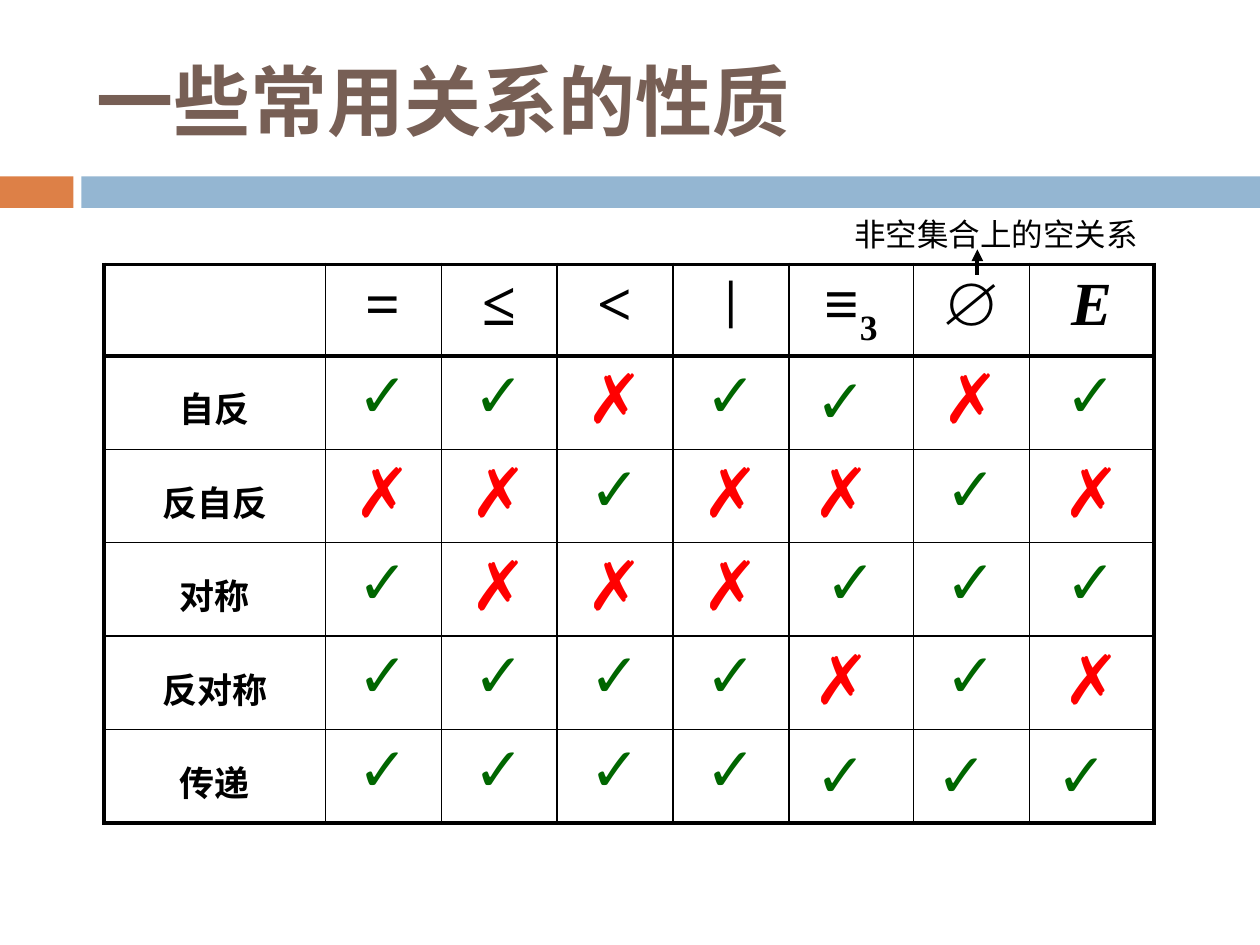
from lxml import etree
from pptx import Presentation
from pptx.dml.color import RGBColor
from pptx.enum.dml import MSO_LINE_DASH_STYLE
from pptx.enum.lang import MSO_LANGUAGE_ID
from pptx.enum.shapes import MSO_CONNECTOR, MSO_SHAPE
from pptx.enum.text import MSO_ANCHOR, PP_ALIGN
from pptx.oxml.ns import qn
from pptx.util import Pt

CHINESE = MSO_LANGUAGE_ID.SIMPLIFIED_CHINESE
STRAIGHT = MSO_CONNECTOR.STRAIGHT
RECTANGLE = MSO_SHAPE.RECTANGLE
SOLID = MSO_LINE_DASH_STYLE.SOLID
MIDDLE = MSO_ANCHOR.MIDDLE
LEFT, CENTER = PP_ALIGN.LEFT, PP_ALIGN.CENTER

BLACK = RGBColor(0, 0, 0)
BROWN = RGBColor(0x77, 0x5F, 0x55)
ORANGE = RGBColor(0xDD, 0x80, 0x47)
BLUE = RGBColor(0x94, 0xB6, 0xD2)
GREEN = RGBColor(0, 0x66, 0)
RED = RGBColor(0xFF, 0, 0)

HEADING, LABEL, SYMBOL = "Calibri", "Arial", "Times New Roman"
RELATIONS = "=≤<|≡∅E"
PROPERTIES = {
    "自反": "✓✓✗✓✓✗✓",
    "反自反": "✗✗✓✗✗✓✗",
    "对称": "✓✗✗✗✓✓✓",
    "反对称": "✓✓✓✓✗✓✗",
    "传递": "✓✓✓✓✓✓✓",
}
MARK_FORMATS = {"✓": (35, GREEN), "✗": (39, RED)}
SPACED_MARKS = {(1, 5), (2, 5), (4, 5), (5, 5), (5, 6), (5, 7)}
COLUMN_WIDTHS = [126.5, 66.2, 66.2, 66.2, 66.2, 71.3, 66.2, 71.2]
ROW_HEIGHTS = [52.4] + [53.4] * len(PROPERTIES)


def write(paragraph, text, size, font=SYMBOL, color=BLACK, bold=True,
          italic=False, baseline=0, align=CENTER):
    """Append a formatted run to a paragraph."""
    paragraph.alignment = align
    run = paragraph.add_run()
    run.text = text
    run.font.size = Pt(size)
    run.font.name = font
    run.font.color.rgb = color
    run.font.bold = bold
    run.font.italic = italic
    run.font.language_id = CHINESE
    if baseline:
        run.font._element.set("baseline", str(baseline * 1000))


def add_bar(slide, left, width, color):
    """Draw one part of the band below the title."""
    bar = slide.shapes.add_shape(RECTANGLE, Pt(left), Pt(100.8), Pt(width), Pt(18))
    bar.shadow.inherit = False
    bar.fill.solid()
    bar.fill.fore_color.rgb = color
    bar.line.fill.background()


def add_title(slide, text):
    """Place and fill the title placeholder."""
    title = slide.shapes.title
    title.left, title.top, title.width, title.height = Pt(48), Pt(18), Pt(642), Pt(78)
    title.text_frame.vertical_anchor = MIDDLE
    write(title.text_frame.paragraphs[0], text, 44, font=HEADING, color=BROWN, align=LEFT)


def add_note(slide, text):
    """Write the remark above the table."""
    note = slide.shapes.add_textbox(Pt(481), Pt(119.5), Pt(178), Pt(29))
    note.text_frame.word_wrap = False
    write(note.text_frame.paragraphs[0], text, 18, font=HEADING, bold=False, align=LEFT)


def add_arrow(slide, x, start, end):
    """Draw a vertical arrow from start to end."""
    arrow = slide.shapes.add_connector(STRAIGHT, Pt(x), Pt(start), Pt(x), Pt(end))
    arrow.line.color.rgb = BLACK
    arrow.line.width = Pt(2.25)
    arrow.line.dash_style = SOLID
    etree.SubElement(arrow.line._get_or_add_ln(), qn("a:tailEnd"), type="triangle")
    etree.SubElement(arrow._element.spPr, qn("a:effectLst"))


def set_borders(cell, **widths):
    """Give each side of a cell a black line of its own width."""
    properties = cell._tc.get_or_add_tcPr()
    for side, width in widths.items():
        border = etree.SubElement(properties, qn(f"a:ln{side}"), w=str(Pt(width)))
        fill = etree.SubElement(border, qn("a:solidFill"))
        etree.SubElement(fill, qn("a:srgbClr"), val=str(BLACK))


def format_cell(cell, row, column):
    """Frame a cell by its place in the grid and clear its fill."""
    last_row, last_column = len(ROW_HEIGHTS) - 1, len(COLUMN_WIDTHS) - 1
    set_borders(
        cell,
        L=2.25 if column == 0 else 1,
        R=2.25 if column == last_column else 1,
        T={0: 2.25, 1: 3}.get(row, 1),
        B={0: 3, last_row: 2.25}.get(row, 1),
    )
    cell.fill.background()


def add_relation_table(slide):
    """Build the table of relations and their properties."""
    frame = slide.shapes.add_table(
        len(ROW_HEIGHTS), len(COLUMN_WIDTHS), Pt(59.5), Pt(151),
        Pt(sum(COLUMN_WIDTHS)), Pt(sum(ROW_HEIGHTS)))
    table = frame.table
    table.first_row = table.horz_banding = False
    for column, width in zip(table.columns, COLUMN_WIDTHS):
        column.width = Pt(width)
    for row, height in enumerate(ROW_HEIGHTS):
        table.rows[row].height = Pt(height)
        for column in range(len(COLUMN_WIDTHS)):
            format_cell(table.cell(row, column), row, column)

    for column, relation in enumerate(RELATIONS, 1):
        heading = table.cell(0, column).text_frame.paragraphs[0]
        write(heading, relation, 30 if relation == "|" else 35, italic=relation == "E")
        if relation == "≡":
            write(heading, "3", 35, baseline=-25)

    for row, (name, marks) in enumerate(PROPERTIES.items(), 1):
        label = table.cell(row, 0)
        label.margin_top = Pt(15)
        write(label.text_frame.paragraphs[0], name, 20, font=LABEL)
        for column, mark in enumerate(marks, 1):
            verdict = table.cell(row, column).text_frame.paragraphs[0]
            size, color = MARK_FORMATS[mark]
            write(verdict, mark, size, font=LABEL, color=color)
            if (row, column) in SPACED_MARKS:
                write(verdict, " ", 39, font=LABEL, color=color)


def main():
    """Build the slide and save it."""
    presentation = Presentation()
    presentation.slide_width, presentation.slide_height = Pt(720), Pt(540)
    slide = presentation.slides.add_slide(presentation.slide_layouts[5])
    add_bar(slide, 0, 42, ORANGE)
    add_bar(slide, 46.5, 673.5, BLUE)
    add_relation_table(slide)
    add_title(slide, "一些常用关系的性质")
    add_note(slide, "非空集合上的空关系")
    add_arrow(slide, 558.5, 157, 142.5)
    presentation.save("out.pptx")


if __name__ == "__main__":
    main()
